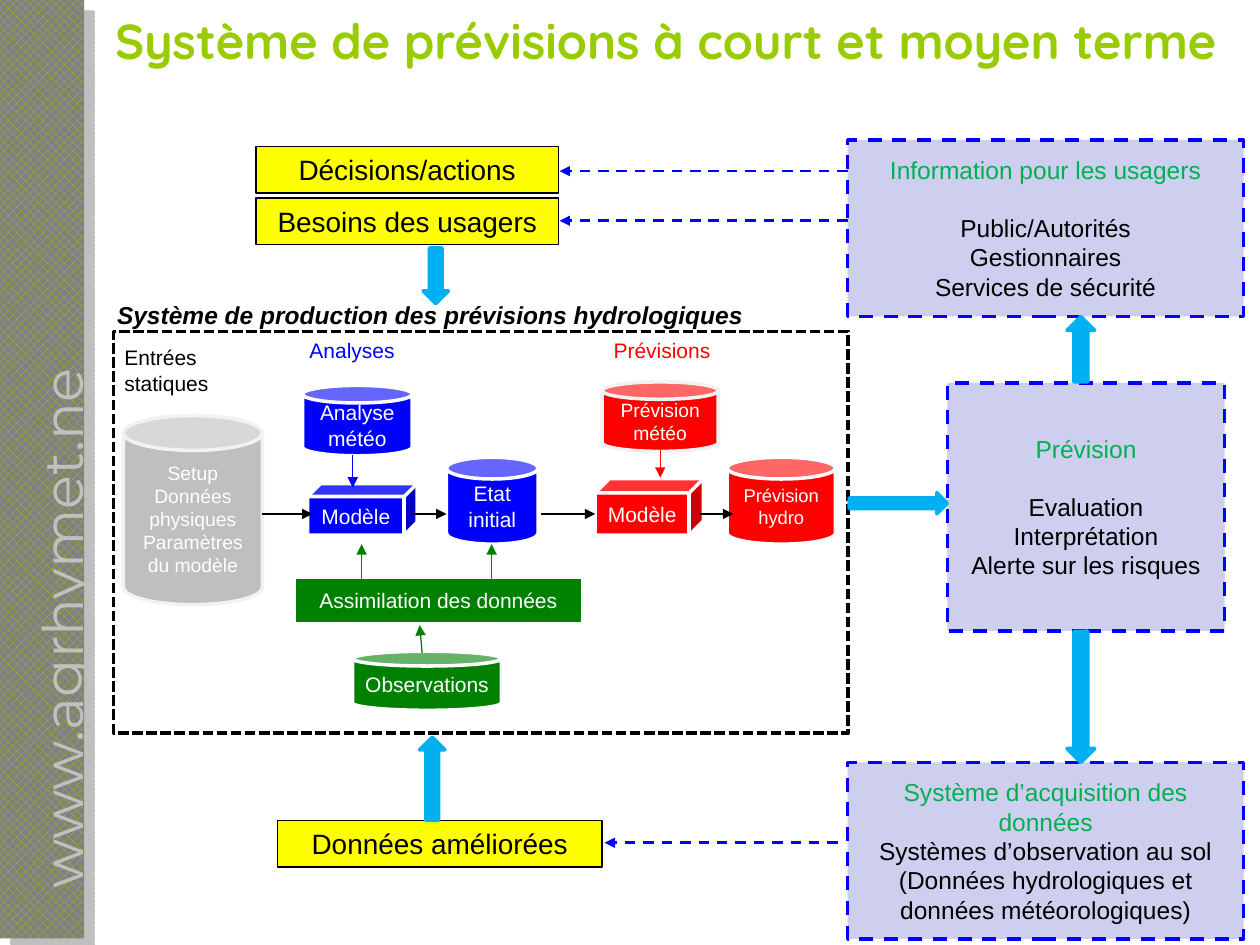
from lxml import etree
from pptx import Presentation
from pptx.dml.color import RGBColor
from pptx.enum.dml import MSO_LINE as Dash, MSO_PATTERN as Pattern
from pptx.enum.shapes import MSO_CONNECTOR as Connector, MSO_SHAPE as Shape
from pptx.enum.text import MSO_ANCHOR as Anchor, MSO_AUTO_SIZE as AutoSize, PP_ALIGN as Align
from pptx.oxml import parse_xml
from pptx.oxml.ns import nsdecls, qn
from pptx.util import Cm, Pt

BLUE, RED, GREEN, WHITE, BLACK = "0000FF", "FF0000", "008000", "FFFFFF", "000000"
LIME, GREY, SILVER, PALE = "99CC00", "808080", "C0C0C0", "F2F2F2"
YELLOW, SKY, LAVENDER, HEADING = "FFFF00", "00B0F0", "CECEEF", "00B050"
BLANK_LINE = 16.1  # points, one line of 14-point text


def color(hex_value):
    return RGBColor.from_string(hex_value)


def set_text(shape, lines, size, text_color=WHITE, align=Align.CENTER,
             anchor=Anchor.MIDDLE, wrap=True, **formats):
    frame = shape.text_frame
    frame.auto_size = AutoSize.NONE
    frame.word_wrap = wrap
    frame.vertical_anchor = anchor
    formats = {"name": "Arial", "size": Pt(size), **formats}
    for index, line in enumerate(lines):
        paragraph = frame.add_paragraph() if index else frame.paragraphs[0]
        paragraph.alignment = align
        run = paragraph.add_run()
        run.text = line
        run.font.color.rgb = color(text_color)
        for name, value in formats.items():
            setattr(run.font, name, value)
    return frame


def add_block(slide, kind, box, fill, line, width=2, dash=None):
    shape = slide.shapes.add_shape(kind, *map(Cm, box))
    shape.shadow.inherit = False
    if fill:
        shape.fill.solid()
        shape.fill.fore_color.rgb = color(fill)
    else:
        shape.fill.background()
    shape.line.color.rgb = color(line)
    shape.line.width = Pt(width)
    if dash:
        shape.line.dash_style = dash
    return shape


def add_solid(slide, kind, box, fill, lines, size=12, line=WHITE):
    frame = set_text(add_block(slide, kind, box, fill, line), lines, size)
    frame.margin_left = frame.margin_right = Cm(0.15)


def add_need(slide, box, text):
    shape = add_block(slide, Shape.RECTANGLE, box, YELLOW, BLACK, 0.75)
    set_text(shape, [text], 16, BLACK, anchor=Anchor.TOP)


def add_panel(slide, box, heading, lines, gap):
    shape = add_block(slide, Shape.RECTANGLE, box, LAVENDER, BLUE, dash=Dash.DASH)
    frame = set_text(shape, [heading, *lines], 14, BLACK)
    frame.paragraphs[0].runs[0].font.color.rgb = color(HEADING)
    frame.paragraphs[1].space_before = Pt(gap)


def add_label(slide, box, text, text_color, size=12, **formats):
    text_box = slide.shapes.add_textbox(*map(Cm, box))
    set_text(text_box, [text], size, text_color, Align.LEFT, Anchor.TOP, **formats)


def add_arrow(slide, points, line, width=0.75, dash=None):
    connector = slide.shapes.add_connector(Connector.STRAIGHT, *map(Cm, points))
    connector.line.color.rgb = color(line)
    connector.line.width = Pt(width)
    if dash:
        connector.line.dash_style = dash
    etree.SubElement(connector.line._get_or_add_ln(), qn("a:tailEnd"), type="triangle")
    etree.SubElement(connector._element.spPr, qn("a:effectLst"))


def add_sidebar(slide):
    bar = add_block(slide, Shape.RECTANGLE, (0, 0, 1.7, 18.92), GREY, GREY)
    bar.line.fill.background()
    bar.fill.patterned()
    bar.fill.pattern = Pattern.PERCENT_50
    bar.fill.fore_color.rgb = color(LIME)
    bar.fill.back_color.rgb = color(GREY)
    effects = bar._element.spPr.find(qn("a:effectLst"))
    effects.append(parse_xml(
        f'<a:outerShdw {nsdecls("a")} dist="{Pt(8.5)}" dir="2700000" algn="ctr">'
        f'<a:srgbClr val="{GREY}"><a:alpha val="50000"/></a:srgbClr></a:outerShdw>'))

    address = slide.shapes.add_textbox(Cm(-4.34), Cm(12.17), Cm(10.52), Cm(0.99))
    address.rotation = 270
    frame = set_text(address, ["www.agrhymet.ne"], 32, SILVER,
                     anchor=Anchor.TOP, wrap=False, name="Montserrat")
    properties = frame.paragraphs[0].runs[0]._r.get_or_add_rPr()
    properties.insert(0, parse_xml(
        f'<a:ln {nsdecls("a")} w="{Pt(0.75)}"><a:solidFill>'
        f'<a:srgbClr val="{BLACK}"/></a:solidFill></a:ln>'))


def add_title(slide):
    title = slide.shapes.title
    title.left, title.top, title.width, title.height = map(Cm, (1.37, 0.08, 24.1, 1.45))
    set_text(title, ["Système de prévisions à court et moyen terme"], 28, LIME,
             anchor=Anchor.TOP, name="Quicksand", bold=True)


def add_production_system(slide):
    # Models, stores and data inside the frame
    setup = ["Setup", "Données", "physiques", "Paramètres du modèle"]
    add_solid(slide, Shape.CAN, (2.49, 8.38, 2.8, 3.81), "BFBFBF", setup, 11, PALE)
    add_solid(slide, Shape.CUBE, (6.2, 9.75, 2.21, 1.04), BLUE, ["Modèle"])
    add_solid(slide, Shape.CAN, (9, 9.22, 1.85, 1.75), BLUE, ["Etat initial"])
    add_solid(slide, Shape.RECTANGLE, (5.94, 11.63, 5.8, 0.94), GREEN,
              ["Assimilation des données"])
    add_solid(slide, Shape.CUBE, (12, 9.65, 2.18, 1.14), RED, ["Modèle"])
    add_solid(slide, Shape.CAN, (14.66, 9.22, 2.18, 1.75), RED, ["Prévision hydro"], 10.5)
    add_solid(slide, Shape.CAN, (7.11, 13.13, 3, 1.19), GREEN, ["Observations"])
    add_solid(slide, Shape.CAN, (6.1, 7.77, 2.21, 1.42), BLUE, ["Analyse météo"])
    add_solid(slide, Shape.CAN, (12.14, 7.7, 2.34, 1.4), RED, ["Prévision météo"], 11, PALE)

    # Frame and captions
    add_block(slide, Shape.RECTANGLE, (2.29, 6.68, 14.81, 8.1), None, BLACK,
              dash=Dash.SQUARE_DOT)
    add_label(slide, (2.11, 5.92, 13.59, 0.86),
              "Système de production des prévisions hydrologiques", BLACK, 14,
              bold=True, italic=True)
    add_label(slide, (2.26, 6.83, 2.6, 1.27), "Entrées statiques", BLACK)
    add_label(slide, (5.99, 6.68, 3.68, 0.76), "Analyses", BLUE)
    add_label(slide, (12.12, 6.68, 2.54, 0.76), "Prévisions", RED)

    # Flow along the model row
    for start, end in ((5.28, 6.3), (8.31, 9), (10.9, 12), (14.1, 14.78)):
        add_arrow(slide, (start, 10.36, end, 10.36), BLACK)
    # Assimilation and weather inputs
    for x in (7.29, 9.91):
        add_arrow(slide, (x, 11.76, x, 10.97), GREEN)
    add_arrow(slide, (8.51, 13.16, 8.46, 12.6), GREEN)
    add_arrow(slide, (7.11, 9.17, 7.11, 9.83), BLUE)
    add_arrow(slide, (13.31, 8.97, 13.31, 9.63), RED)


def add_surroundings(slide):
    # Dashed panels on the right
    left, width, height = 17.09, 7.98, 3.56
    add_panel(slide, (left, 2.82, width, height), "Information pour les usagers",
              ["Public/Autorités", "Gestionnaires", "Services de sécurité"], BLANK_LINE)
    add_panel(slide, (19.1, 7.72, 5.59, 5), "Prévision",
              ["Evaluation", "Interprétation", "Alerte sur les risques"], BLANK_LINE)
    add_panel(slide, (left, 15.37, width, height), "Système d’acquisition des données",
              ["Systèmes d’observation au sol",
               "(Données hydrologiques et données météorologiques)"], 0)

    # Yellow boxes
    add_need(slide, (5.16, 2.95, 6.1, 0.94), "Décisions/actions")
    add_need(slide, (5.16, 3.99, 6.1, 0.94), "Besoins des usagers")
    add_need(slide, (5.59, 16.54, 6.55, 0.94), "Données améliorées")

    # Block arrows
    for kind, box in (
        (Shape.RIGHT_ARROW, (17.12, 9.93, 1.98, 0.43)),
        (Shape.DOWN_ARROW, (21.51, 12.73, 0.56, 2.64)),
        (Shape.UP_ARROW, (21.51, 6.38, 0.56, 1.32)),
        (Shape.DOWN_ARROW, (8.53, 5, 0.51, 1.12)),
        (Shape.UP_ARROW, (8.46, 14.86, 0.51, 1.68)),
    ):
        add_block(slide, kind, box, SKY, SKY)

    # Dashed links to the yellow boxes
    for start, end, y in ((17.09, 11.28, 3.45), (17.09, 11.28, 4.45), (16.89, 12.19, 16.99)):
        add_arrow(slide, (start, y, end, y), BLUE, 1.5, Dash.DASH)


def main():
    presentation = Presentation()
    presentation.slide_width, presentation.slide_height = Cm(25.4), Cm(19.05)
    slide = presentation.slides.add_slide(presentation.slide_layouts[5])
    add_sidebar(slide)
    add_title(slide)
    add_production_system(slide)
    add_surroundings(slide)
    presentation.save("out.pptx")


if __name__ == "__main__":
    main()
